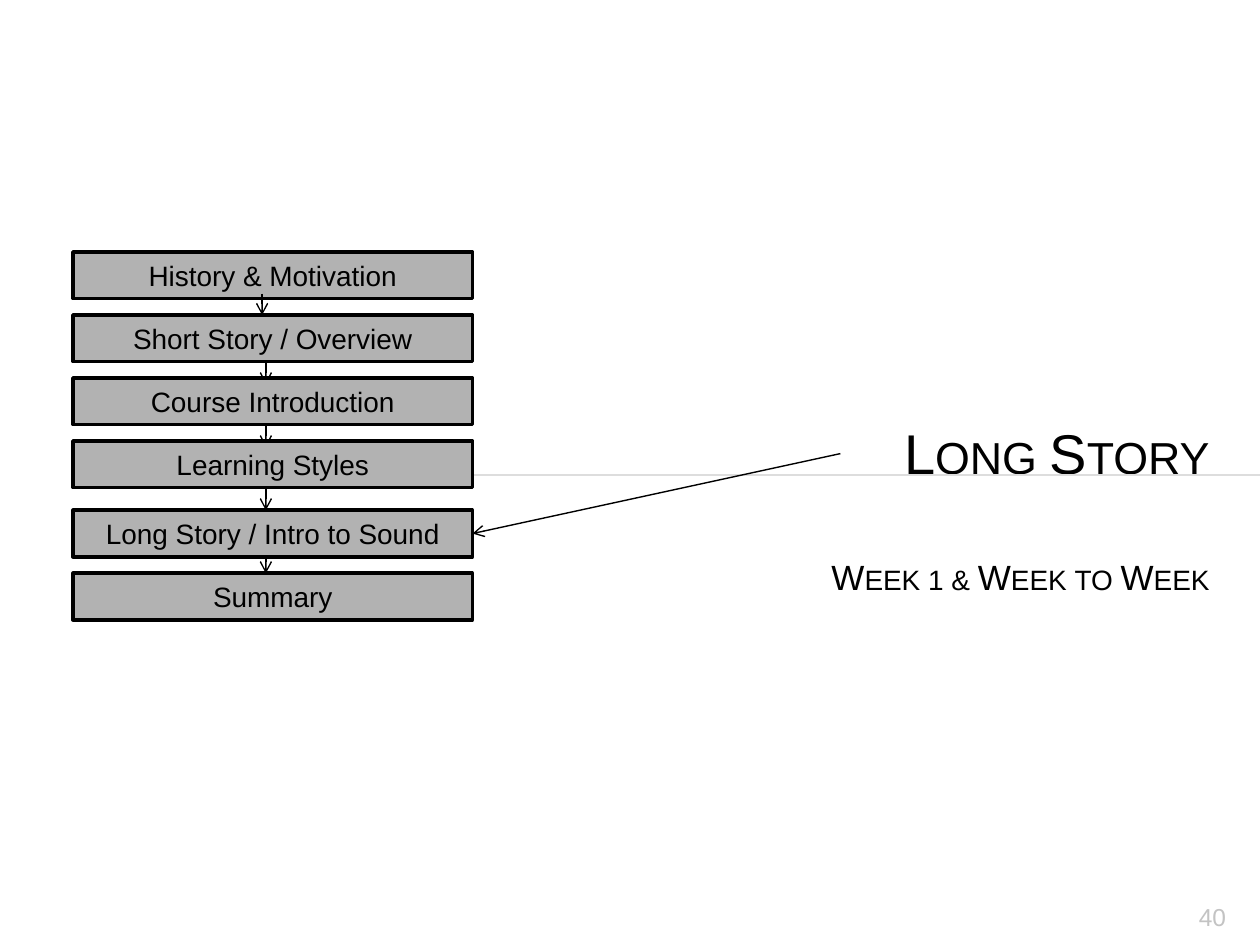
from lxml.etree import SubElement
from pptx import Presentation
from pptx.dml.color import RGBColor
from pptx.enum.shapes import MSO_CONNECTOR, MSO_SHAPE
from pptx.enum.text import MSO_ANCHOR, MSO_AUTO_SIZE, PP_ALIGN
from pptx.oxml.ns import qn
from pptx.util import Inches, Pt

COLORS = {"ink": "000000", "box": "B2B2B2", "rule": "DDDDDD", "number": "C3C3C3"}
BOX_LEFT, BOX_WIDTH, BOX_HEIGHT = 0.58, 3.17, 0.37
TOPICS = [
    ("History & Motivation", 2),
    ("Short Story / Overview", 2.5),
    ("Course Introduction", 3),
    ("Learning Styles", 3.5),
    ("Long Story / Intro to Sound", 4.05),
    ("Summary", 4.55),
]


def color(name):
    """Return the named palette colour."""
    return RGBColor.from_string(COLORS[name])


def add_span(para, text, size, color_name="ink"):
    """Append a formatted run to a paragraph and return it."""
    span = para.add_run()
    span.text = text
    span.font.name = "Arial"
    span.font.size = Pt(size)
    span.font.bold = False
    span.font.color.rgb = color(color_name)
    return span


def add_line(page, start, end, color_name="ink", width=0.79, arrow=True):
    """Draw a straight line, with an open arrowhead at its end if wanted."""
    points = [Inches(value) for value in (*start, *end)]
    line = page.shapes.add_connector(MSO_CONNECTOR.STRAIGHT, *points)
    line.line.color.rgb = color(color_name)
    line.line.width = Pt(width)
    if arrow:
        SubElement(line.line._get_or_add_ln(), qn("a:tailEnd"), type="arrow")
    SubElement(line._element.spPr, qn("a:effectLst"))
    return line


def add_topic(page, label, top):
    """Draw one outlined topic box with a centred label."""
    box = page.shapes.add_shape(
        MSO_SHAPE.RECTANGLE, Inches(BOX_LEFT), Inches(top), Inches(BOX_WIDTH), Inches(BOX_HEIGHT)
    )
    box.shadow.inherit = False
    box.fill.solid()
    box.fill.fore_color.rgb = color("box")
    box.line.color.rgb = color("ink")
    box.line.width = Pt(2)
    frame = box.text_frame
    frame.word_wrap = False
    frame.vertical_anchor = MSO_ANCHOR.MIDDLE
    para = frame.paragraphs[0]
    para.alignment = PP_ALIGN.CENTER
    add_span(para, label, 16)
    return box


def fill_title(page):
    """Place the title and its subtitle in small capitals."""
    title = page.shapes.title
    title.left, title.top = Inches(4.92), Inches(3.22)
    title.width, title.height = Inches(4.78), Inches(0.76)
    frame = title.text_frame
    frame.word_wrap = True
    frame.auto_size = MSO_AUTO_SIZE.NONE
    frame.vertical_anchor = MSO_ANCHOR.TOP
    frame.margin_top = Inches(0.1)
    heading, subtitle = frame.paragraphs[0], frame.add_paragraph()
    subtitle.space_before = Pt(40)
    for para, text, size in ((heading, "Long Story", 32), (subtitle, "Week 1 & Week to Week", 20)):
        para.alignment = PP_ALIGN.RIGHT
        span = add_span(para, text, size)
        span.font._element.set("cap", "small")


def add_page_number(page, number):
    """Write the page number at the lower right."""
    box = page.shapes.add_textbox(Inches(9), Inches(7.08), Inches(0.83), Inches(0.27))
    frame = box.text_frame
    frame.word_wrap = True
    frame.margin_top = Inches(0.08)
    para = frame.paragraphs[0]
    para.alignment = PP_ALIGN.RIGHT
    add_span(para, number, 14, "number")


def main():
    """Build and save the deck."""
    deck = Presentation()
    deck.slide_width, deck.slide_height = Inches(10), Inches(7.5)
    page = deck.slides.add_slide(deck.slide_layouts[5])
    add_line(page, (0.56, 3.77), (10, 3.77), "rule", 0.75, arrow=False)
    add_page_number(page, "40")
    fill_title(page)
    for top in (2.88, 3.38, 3.88, 4.38):
        add_line(page, (2.11, top), (2.11, top + 0.17))
    boxes = {label: add_topic(page, label, top) for label, top in TOPICS}
    add_line(page, (2.08, 2.33), (2.08, 2.5))
    pointer = add_line(page, (6.67, 3.6), (3.75, 4.23))
    pointer.end_connect(boxes["Long Story / Intro to Sound"], 3)
    deck.save("out.pptx")


if __name__ == "__main__":
    main()
